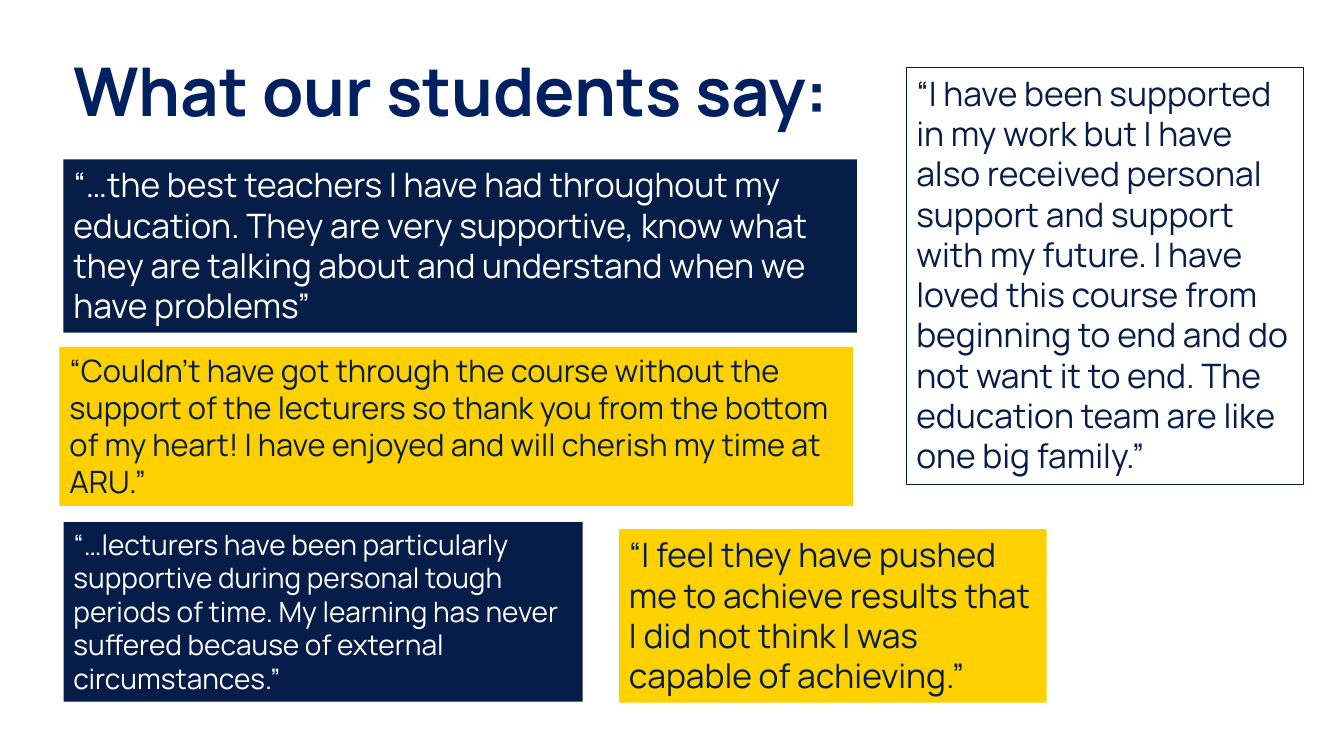
from dataclasses import dataclass

from pptx import Presentation
from pptx.dml.color import RGBColor
from pptx.enum import shapes, text
from pptx.util import Pt

SCALE = 9144  # EMU in one px, 100 px to the inch


@dataclass(frozen=True)
class Theme:
    font: str = "Manrope"
    title: str = "002060"
    navy: str = "061D48"
    ink: str = "071D49"
    gold: str = "FFD000"
    amber: str = "FFD100"
    white: str = "FFFFFF"
    huge: int = 48
    large: int = 24
    medium: int = 22
    small: int = 20


THEME = Theme()


def px(*sizes):
    return [size * SCALE for size in sizes]


def rgb(color):
    return RGBColor.from_string(color)


def write(frame, words, size, color, bold=False):
    """Put the words into the frame's first paragraph and return it."""
    frame.word_wrap = True
    para = frame.paragraphs[0]
    para.alignment = text.PP_ALIGN.LEFT
    run = para.add_run()
    run.text = words
    font = run.font
    font.name, font.size, font.bold = THEME.font, Pt(size), bold
    font.color.rgb = rgb(color)
    return para


def add_title(slide, area, words):
    frame = slide.shapes.add_textbox(*px(*area)).text_frame
    para = write(frame, words, THEME.huge, THEME.title, bold=True)
    para.line_spacing = 0.9
    frame.auto_size = text.MSO_AUTO_SIZE.NONE
    frame.vertical_anchor = text.MSO_ANCHOR.MIDDLE


def add_quote(slide, area, words, size, color, fill=None):
    """Add a filled quote box, or an outlined one when there is no fill."""
    box = slide.shapes.add_shape(shapes.MSO_SHAPE.RECTANGLE, *px(*area))
    box.shadow.inherit = False
    if fill:
        box.fill.solid()
        box.fill.fore_color.rgb = rgb(fill)
        box.line.fill.background()
    else:
        box.fill.background()
        box.line.color.rgb = rgb(THEME.navy)
        box.line.width = Pt(0.75)
    frame = box.text_frame
    write(frame, words, size, color)
    frame.vertical_anchor = text.MSO_ANCHOR.TOP
    frame.auto_size = text.MSO_AUTO_SIZE.SHAPE_TO_FIT_TEXT


def main():
    deck = Presentation()
    deck.slide_width, deck.slide_height = px(1333, 750)
    slide = deck.slides.add_slide(deck.slide_layouts[6])

    t = THEME
    add_quote(slide, (899, 67, 394, 414),
              "“I have been supported in my work but I have also received "
              "personal support and support with my future. I have loved this "
              "course from beginning to end and do not want it to end. The "
              "education team are like one big family.”",
              t.large, t.ink)
    add_title(slide, (63, 30, 998, 128), "What our students say:")
    add_quote(slide, (63, 158, 787, 172),
              "“…the best teachers I have had throughout my education. They "
              "are very supportive, know what they are talking about and "
              "understand when we have problems”",
              t.large, t.white, t.navy)
    add_quote(slide, (59, 344, 787, 158),
              "“Couldn't have got through the course without the support of "
              "the lecturers so thank you from the bottom of my heart! I have "
              "enjoyed and will cherish my time at ARU.”",
              t.medium, t.navy, t.gold)
    add_quote(slide, (63, 518, 515, 178),
              "“…lecturers have been particularly supportive during personal "
              "tough periods of time. My learning has never suffered because "
              "of external circumstances.”",
              t.small, t.white, t.ink)
    add_quote(slide, (614, 525, 424, 172),
              "“I feel they have pushed me to achieve results that I did not "
              "think I was capable of achieving.”",
              t.large, t.navy, t.amber)

    deck.save("out.pptx")


if __name__ == "__main__":
    main()
